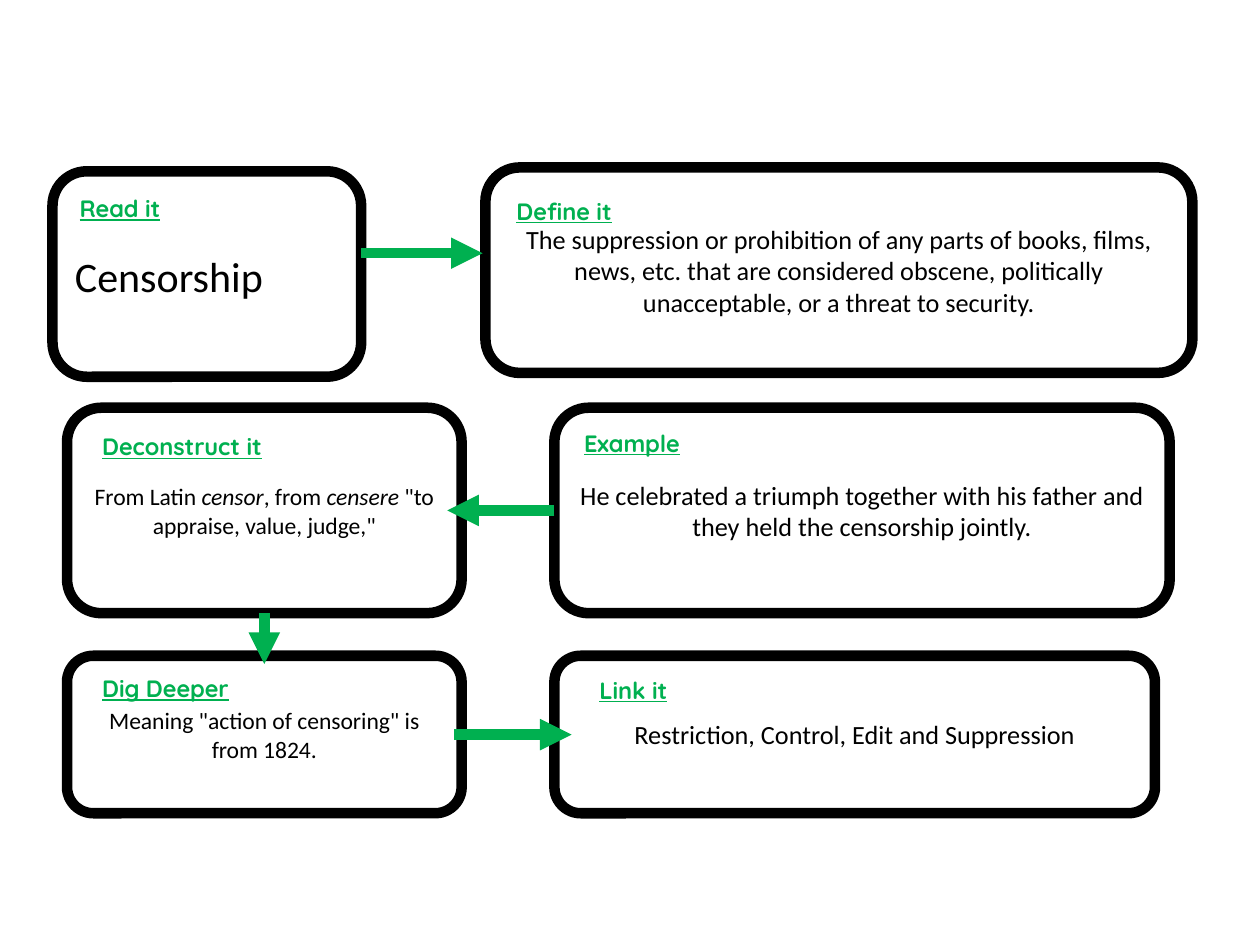
from dataclasses import dataclass
from typing import Optional

from lxml.etree import SubElement
from pptx import Presentation
from pptx.dml.color import RGBColor
from pptx.enum.shapes import MSO_CONNECTOR as Connector, MSO_SHAPE as Preset
from pptx.enum.text import MSO_ANCHOR as Anchor, MSO_AUTO_SIZE as AutoSize, PP_ALIGN as Align
from pptx.oxml.ns import qn
from pptx.shapes.autoshape import Shape
from pptx.slide import Slide
from pptx.util import Pt

COLORS = {"ink": "000000", "paper": "FFFFFF", "accent": "00B050"}
BODY_FONT, HEADING_FONT = "Calibri", "Quicksand"
BORDER = 6
HEADING_SIZE, HEADING_HEIGHT = 13.5, 23.8
BOTTOM, LEFT = 2, 1


@dataclass(frozen=True)
class Piece:
    text: str
    italic: bool = False


@dataclass(frozen=True)
class Heading:
    text: str
    left: float
    top: float
    width: float = 72


@dataclass(frozen=True)
class Card:
    left: float
    top: float
    width: float
    height: float
    heading: Heading
    pieces: tuple[Piece, ...]
    size: float = 15
    align: Align = Align.CENTER
    line_spacing: float = 1


@dataclass(frozen=True)
class Arrow:
    start: tuple[float, float]
    end: tuple[float, float]
    source: Optional[str] = None
    side: int = 0


CARDS = [
    Card(30, 97.9, 176.4, 117.4, Heading("Read it", 38.4, 107.3),
         (Piece("Censorship"),), 24, Align.LEFT, 1.07),
    Card(277.4, 95.7, 404, 117.4, Heading("Define it", 288, 108.7),
         (Piece("The suppression or prohibition of any parts of books, films, news, etc. "
                "that are considered obscene, politically unacceptable, "
                "or a threat to security."),)),
    Card(38.3, 233, 225.5, 117.4, Heading("Deconstruct it", 51.3, 243.4, 128.2),
         (Piece("From Latin "), Piece("censor", True), Piece(", from "),
          Piece("censere", True), Piece(' "to appraise, value, judge,"')), 13.5),
    Card(316.8, 233, 351.6, 117.4, Heading("Example", 326.7, 241.4),
         (Piece("He celebrated a triumph together with his father and "
                "they held the censorship jointly."),)),
    Card(38.3, 374.7, 225.5, 90, Heading("Dig Deeper", 51.3, 381.6, 90),
         (Piece('Meaning "action of censoring" is from 1824.'),), 13.5),
    Card(316.8, 374.7, 343.2, 90, Heading("Link it", 335.5, 382.6),
         (Piece("Restriction, Control, Edit and Suppression"),)),
]

ARROWS = [
    Arrow((316.8, 291.7), (255.6, 291.7), "Example", LEFT),
    Arrow((206.4, 144.7), (275.8, 144.7)),
    Arrow((259.5, 419.8), (326.6, 419.8)),
    Arrow((151.05, 350.4), (151.05, 379.4), "Deconstruct it", BOTTOM),
]


def color(name: str) -> RGBColor:
    return RGBColor.from_string(COLORS[name])


def draw_card(page: Slide, card: Card) -> Shape:
    box = page.shapes.add_shape(Preset.ROUNDED_RECTANGLE, Pt(card.left), Pt(card.top),
                                Pt(card.width), Pt(card.height))
    box.shadow.inherit = False
    box.fill.solid()
    box.fill.fore_color.rgb = color("paper")
    box.line.color.rgb = color("ink")
    box.line.width = Pt(BORDER)
    frame = box.text_frame
    frame.word_wrap = True
    frame.vertical_anchor = Anchor.MIDDLE
    para = frame.paragraphs[0]
    para.alignment = card.align
    para.line_spacing = card.line_spacing
    for piece in card.pieces:
        span = para.add_run()
        span.text = piece.text
        span.font.name = BODY_FONT
        span.font.size = Pt(card.size)
        span.font.italic = piece.italic
        span.font.color.rgb = color("ink")
    return box


def draw_arrow(page: Slide, arrow: Arrow, boxes: dict[str, Shape]) -> None:
    points = [Pt(value) for value in (*arrow.start, *arrow.end)]
    connector = page.shapes.add_connector(Connector.STRAIGHT, *points)
    if arrow.source:
        connector.begin_connect(boxes[arrow.source], arrow.side)
    connector.line.color.rgb = color("accent")
    connector.line.width = Pt(BORDER)
    SubElement(connector.line._get_or_add_ln(), qn("a:tailEnd"), type="triangle")
    SubElement(connector._element.spPr, qn("a:effectLst"))


def draw_heading(page: Slide, heading: Heading) -> None:
    box = page.shapes.add_textbox(Pt(heading.left), Pt(heading.top),
                                  Pt(heading.width), Pt(HEADING_HEIGHT))
    box.text_frame.word_wrap = True
    box.text_frame.auto_size = AutoSize.SHAPE_TO_FIT_TEXT
    span = box.text_frame.paragraphs[0].add_run()
    span.text = heading.text
    span.font.name = HEADING_FONT
    span.font.size = Pt(HEADING_SIZE)
    span.font.bold = True
    span.font.underline = True
    span.font.color.rgb = color("accent")


def main() -> None:
    deck = Presentation()
    deck.slide_width, deck.slide_height = Pt(720), Pt(540)
    page = deck.slides.add_slide(deck.slide_layouts[6])
    boxes = {card.heading.text: draw_card(page, card) for card in CARDS}
    for arrow in ARROWS:
        draw_arrow(page, arrow, boxes)
    for card in CARDS:
        draw_heading(page, card.heading)
    deck.save("out.pptx")


if __name__ == "__main__":
    main()
